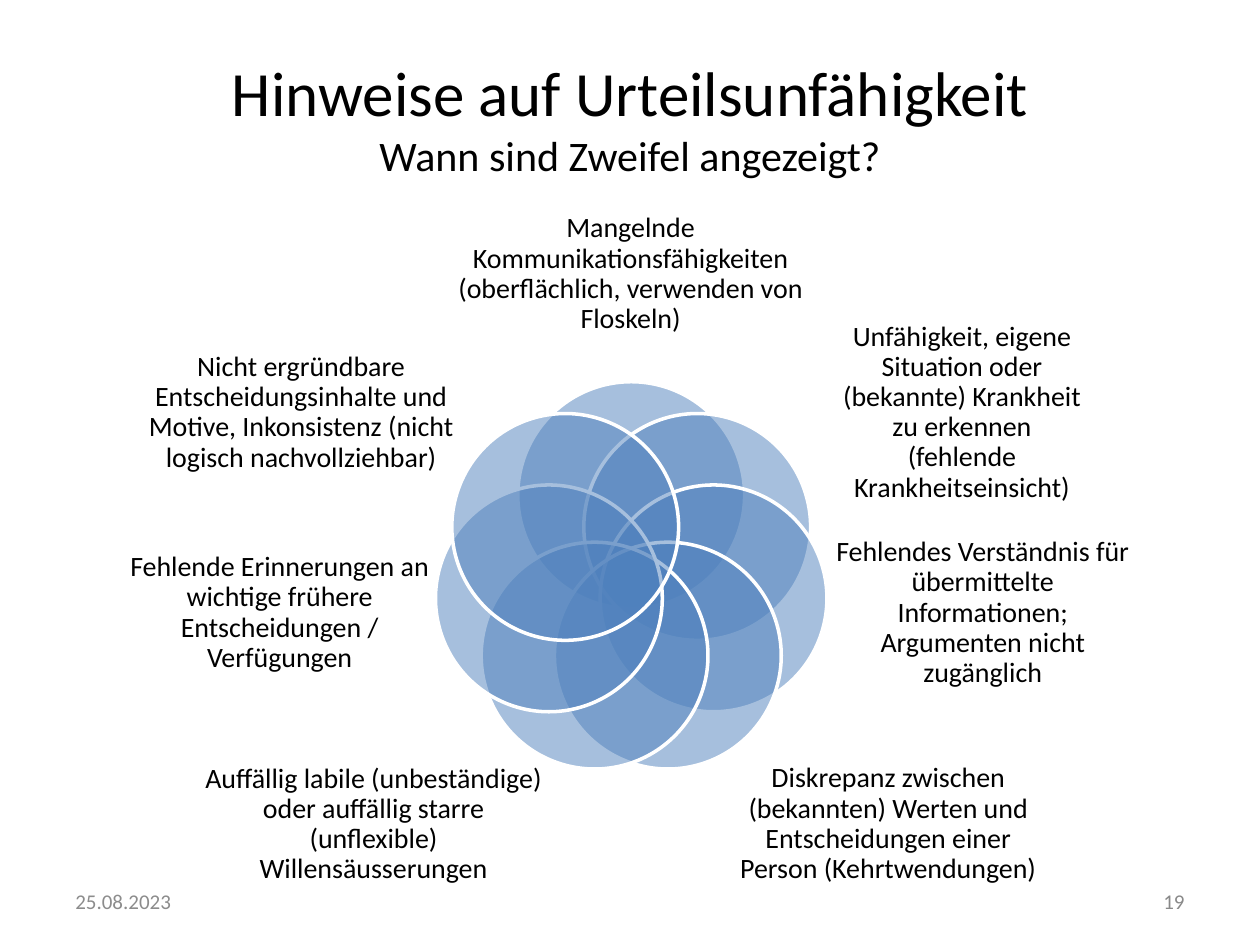
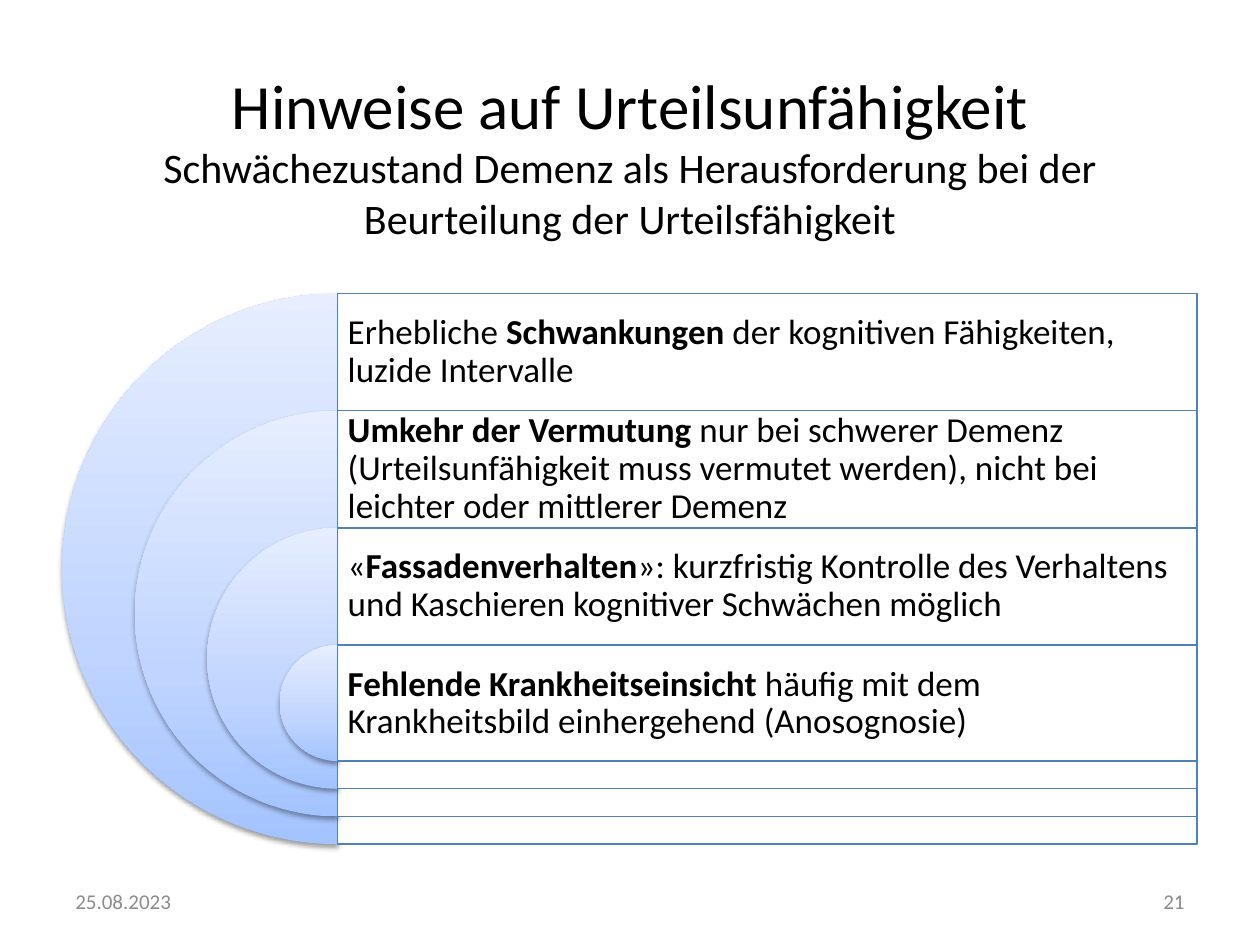
"""Build two slides on signs of lacking capacity of judgement."""
from math import cos, pi, sin

from lxml import etree
from pptx import Presentation
from pptx.dml.color import RGBColor
from pptx.enum.shapes import MSO_SHAPE
from pptx.enum.text import MSO_ANCHOR, MSO_AUTO_SIZE, PP_ALIGN
from pptx.oxml.ns import qn
from pptx.util import Inches, Pt

OVAL, PIE, RECT = MSO_SHAPE.OVAL, MSO_SHAPE.PIE, MSO_SHAPE.RECTANGLE
LEFT, MID, RIGHT = PP_ALIGN.LEFT, PP_ALIGN.CENTER, PP_ALIGN.RIGHT
CENTRE = MSO_ANCHOR.MIDDLE
FIXED = MSO_AUTO_SIZE.NONE

FONT = "Calibri"
BLACK, WHITE, BLUE = "000000", "FFFFFF", "4F81BD"
DATE, PAGE = "8C8C8C", "898989"
BLEND = ((0, "A4C4FF"), (35, "BFD4FF"), (100, "E6EEFF"))
TITLE = "Hinweise auf Urteilsunfähigkeit"

SIGNS = [
    ("Mangelnde Kommunikationsfähigkeiten (oberflächlich, verwenden von Floskeln)",
     (3.59, 1.47, 2.83, 1.41)),
    ("Unfähigkeit, eigene Situation oder (bekannte) Krankheit zu erkennen "
     "(fehlende Krankheitseinsicht)", (6.66, 2.49, 1.95, 1.57)),
    ("Fehlendes Verständnis für übermittelte Informationen; Argumenten nicht "
     "zugänglich", (6.57, 4.22, 2.46, 1.29)),
    ("Diskrepanz zwischen (bekannten) Werten und Entscheidungen einer Person "
     "(Kehrtwendungen)", (5.8, 5.95, 2.5, 1.18)),
    ("Auffällig labile (unbeständige) oder auffällig starre (unflexible) "
     "Willensäusserungen", (1.6, 6.03, 2.73, 1.03)),
    ("Fehlende Erinnerungen an wichtige frühere Entscheidungen / Verfügungen",
     (0.97, 4.22, 2.5, 1.29)),
    ("Nicht ergründbare Entscheidungsinhalte und Motive, Inkonsistenz (nicht "
     "logisch nachvollziehbar)", (1.03, 2.67, 2.72, 1.21)),
]
TRAITS = [
    "Erhebliche *Schwankungen* der kognitiven Fähigkeiten, luzide Intervalle",
    "*Umkehr der Vermutung* nur bei schwerer Demenz (Urteilsunfähigkeit muss "
    "vermutet werden), nicht bei leichter oder mittlerer Demenz",
    "«*Fassadenverhalten*»: kurzfristig Kontrolle des Verhaltens und Kaschieren "
    "kognitiver Schwächen möglich",
    "*Fehlende Krankheitseinsicht* häufig mit dem Krankheitsbild einhergehend "
    "(Anosognosie)",
]


def paint(tone):
    return RGBColor.from_string(tone)


def write(para, text, size=16, tone=BLACK, align=MID, lead=None):
    para.alignment = align
    if lead:
        para.line_spacing = lead
    for i, part in enumerate(text.split("*")):
        if part:
            run = para.add_run()
            run.text = part
            font = run.font
            font.name, font.size, font.bold = FONT, Pt(size), i % 2 == 1
            font.color.rgb = paint(tone)


def label(slide, text, box, pad=(0.1, 0.05), **style):
    frame = slide.shapes.add_textbox(*map(Inches, box)).text_frame
    frame.word_wrap = True
    frame.vertical_anchor = CENTRE
    frame.margin_left = frame.margin_right = Inches(pad[0])
    frame.margin_top = frame.margin_bottom = Inches(pad[1])
    write(frame.paragraphs[0], text, **style)


def draw(slide, kind, box):
    shape = slide.shapes.add_shape(kind, *map(Inches, box))
    shape.shadow.inherit = False
    return shape


def sheet(slide, kind, box, fill, share, edge, width):
    shape = draw(slide, kind, box)
    shape.fill.solid()
    shape.fill.fore_color.rgb = paint(fill)
    tint = shape.fill._xPr.find(qn("a:solidFill"))[0]
    etree.SubElement(tint, qn("a:alpha"), val=str(share * 1000))
    shape.line.color.rgb = paint(edge)
    shape.line.width = Pt(width)


def half(slide, box):
    shape = draw(slide, PIE, box)
    shape.adjustments[0], shape.adjustments[1] = 54, 162
    shape.line.fill.background()
    shape.fill.gradient()
    shape.fill.gradient_angle = 90
    props = shape._element.spPr
    stops = props.find(qn("a:gradFill")).find(qn("a:gsLst"))
    for stop in list(stops):
        stops.remove(stop)
    for spot, tone in BLEND:
        stop = etree.SubElement(stops, qn("a:gs"), pos=str(spot * 1000))
        etree.SubElement(stop, qn("a:srgbClr"), val=tone)
    shade = etree.SubElement(
        props.find(qn("a:effectLst")), qn("a:outerShdw"), blurRad=str(Pt(3.1)),
        dist=str(Pt(1.6)), dir="5400000", rotWithShape="0")
    tint = etree.SubElement(shade, qn("a:srgbClr"), val=BLACK)
    etree.SubElement(tint, qn("a:alpha"), val="38000")


def start(deck, theme, page, top=0.05):
    slide = deck.slides.add_slide(deck.slide_layouts[5])
    head = slide.shapes.title
    head.left, head.top, head.width, head.height = map(Inches, (0.5, 0.3, 9, 1.25))
    frame = head.text_frame
    frame.auto_size = FIXED
    frame.vertical_anchor = CENTRE
    frame.margin_top = Inches(top)
    write(frame.paragraphs[0], TITLE, size=36)
    write(frame.add_paragraph(), theme, size=24)
    label(slide, "25.08.2023", (0.5, 6.95, 2.33, 0.4), size=12, tone=DATE, align=LEFT)
    label(slide, page, (7.17, 6.95, 2.33, 0.4), size=12, tone=PAGE, align=RIGHT)
    return slide


def bloom(slide):
    size, reach, mid_x, mid_y = 1.8, 0.67, 5.01, 4.6
    for i, (text, box) in enumerate(SIGNS):
        turn = 2 * pi * i / len(SIGNS)
        left = mid_x + reach * sin(turn) - size / 2
        top = mid_y - reach * cos(turn) - size / 2
        sheet(slide, OVAL, (left, top, size, size), BLUE, 50, WHITE, 2)
        label(slide, text, box, pad=(0, 0), lead=0.9)


def nest(slide):
    left, width, row = 2.68, 6.82, 0.93
    for i, text in enumerate(TRAITS):
        top, size = 2.33 + i * row, 4.37 - i * 1.15
        half(slide, (left - size / 2, top, size, size))
        sheet(slide, RECT, (left, top, width, size), WHITE, 90, BLUE, 0.75)
        label(slide, text, (left, top, width, row), pad=(0.08, 0.08),
              size=20, align=LEFT, lead=0.9)


def main():
    deck = Presentation()
    deck.slide_width, deck.slide_height = Inches(10), Inches(7.5)
    bloom(start(deck, "Wann sind Zweifel angezeigt?", "19"))
    nest(start(deck, "Schwächezustand Demenz als Herausforderung bei der "
               "Beurteilung der Urteilsfähigkeit", "21", top=0.65))
    deck.save("out.pptx")


if __name__ == "__main__":
    main()
